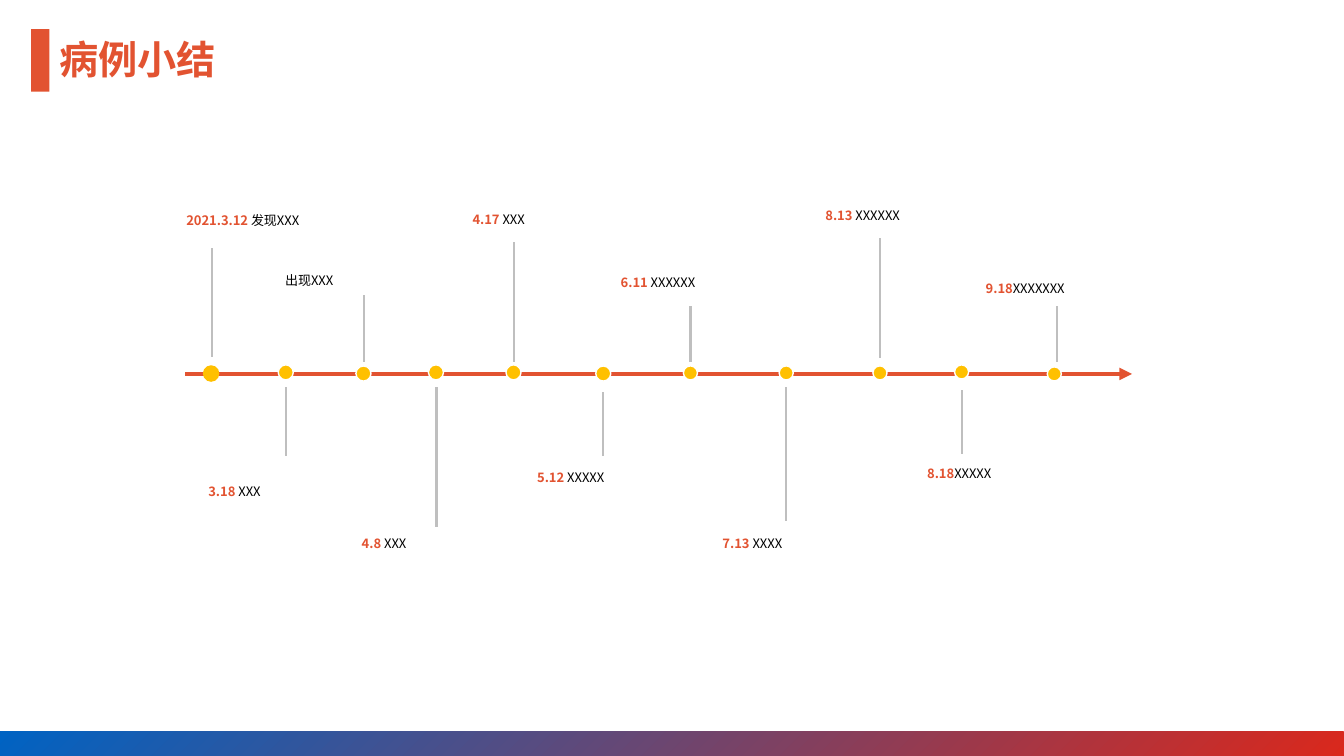
from dataclasses import dataclass

from lxml.etree import SubElement
from pptx import Presentation
from pptx.dml.color import RGBColor
from pptx.enum.shapes import MSO_CONNECTOR_TYPE as Connector
from pptx.enum.shapes import MSO_SHAPE as Preset
from pptx.enum.text import MSO_ANCHOR as Anchor
from pptx.enum.text import PP_ALIGN as Align
from pptx.oxml.ns import qn
from pptx.shapes.autoshape import Shape
from pptx.shapes.connector import Connector as Line
from pptx.slide import Slide
from pptx.text.text import _Run as Span
from pptx.util import Pt

FONT = "Noto Sans CJK SC"
ORANGE = RGBColor(0xE2, 0x53, 0x31)
YELLOW = RGBColor(0xFF, 0xC0, 0x00)
GRAY = RGBColor(0xBF, 0xBF, 0xBF)
WHITE = RGBColor(0xFF, 0xFF, 0xFF)
BLACK = RGBColor(0x00, 0x00, 0x00)
RED = RGBColor(0xDA, 0x28, 0x1C)
BLUE = RGBColor(0x00, 0x63, 0xC3)

PAGE_WIDTH, PAGE_HEIGHT = 960, 540
FOOTER_HEIGHT = 17.3
AXIS_Y = 267.1
LABEL_SIZE = 9.3


@dataclass(frozen=True)
class Frame:
    left: float
    top: float
    width: float
    height: float


@dataclass(frozen=True)
class Dot:
    x: float
    y: float
    size: float = 10.8
    outline: RGBColor = WHITE


@dataclass(frozen=True)
class Stem:
    x: float
    near: float
    far: float


@dataclass(frozen=True)
class Event:
    date: str
    note: str
    label: Frame
    stem: Stem
    dot: Dot
    wrap: bool = True


EVENTS = [
    Event("2021.3.12 ", "发现XXX", Frame(126, 148.3, 157, 18.7),
          Stem(151.2, 254.9, 177.1), Dot(150.8, 266.8, outline=YELLOW)),
    Event("3.18 ", "XXX", Frame(141.8, 339.1, 118.1, 23.8),
          Stem(204.5, 276.5, 325.4), Dot(204.1, 266)),
    Event("", "出现XXX", Frame(196.6, 190.1, 144, 20.2),
          Stem(259.9, 258.5, 211), Dot(259.6, 266.8), wrap=False),
    Event("4.8 ", "XXX", Frame(251.3, 378.7, 115.9, 18.7),
          Stem(311.8, 276.5, 376.6), Dot(311.4, 266)),
    Event("4.17 ", "XXX", Frame(330.5, 146.2, 132.5, 20.2),
          Stem(367.2, 258.5, 172.8), Dot(366.8, 266)),
    Event("5.12 ", "XXXXX", Frame(376.6, 331.9, 115.9, 18.7),
          Stem(430.6, 280.1, 325.4), Dot(430.9, 266.8), wrap=False),
    Event("6.11 ", "XXXXXX", Frame(436.3, 189.4, 115.2, 23.8),
          Stem(493.2, 258.5, 218.9), Dot(493.2, 266.4, 10.1)),
    Event("7.13 ", "XXXX", Frame(509, 378.7, 104.4, 19.4),
          Stem(561.6, 276.5, 372.2), Dot(561.6, 266.4, 10.1)),
    Event("8.13 ", "XXXXXX", Frame(582.5, 144.7, 115.9, 18.7),
          Stem(628.6, 255.6, 169.9), Dot(628.6, 266.4, 10.1)),
    Event("8.18", "XXXXX", Frame(655.2, 328.3, 132.5, 20.2),
          Stem(686.9, 278.6, 324), Dot(686.9, 265.7, 10.1)),
    Event("9.18", "XXXXXXX", Frame(697, 195.8, 132.5, 20.2),
          Stem(755.3, 258.5, 218.9), Dot(753.1, 267.1, 10.1)),
]


def style_span(span: Span, size: float, color: RGBColor, bold: bool) -> None:
    span.font.size = Pt(size)
    span.font.bold = bold
    span.font.color.rgb = color
    span.font.name = FONT
    SubElement(span.font._element, qn("a:ea"), typeface=FONT)


def add_block(page: Slide, preset: Preset, frame: Frame, color: RGBColor) -> Shape:
    block = page.shapes.add_shape(
        preset, Pt(frame.left), Pt(frame.top), Pt(frame.width), Pt(frame.height))
    block.shadow.inherit = False
    block.fill.solid()
    block.fill.fore_color.rgb = color
    block.line.fill.background()
    return block


def add_line(page: Slide, start: tuple[float, float], end: tuple[float, float],
             color: RGBColor, width: float) -> Line:
    line = page.shapes.add_connector(
        Connector.STRAIGHT, Pt(start[0]), Pt(start[1]), Pt(end[0]), Pt(end[1]))
    line.line.color.rgb = color
    line.line.width = Pt(width)
    SubElement(line._element.spPr, qn("a:effectLst"))
    return line


def add_footer(page: Slide) -> None:
    frame = Frame(0, PAGE_HEIGHT - FOOTER_HEIGHT, PAGE_WIDTH, FOOTER_HEIGHT)
    footer = add_block(page, Preset.RECTANGLE, frame, RED)
    footer.fill.gradient()
    footer.fill.gradient_angle = 135
    for stop, color, position in zip(footer.fill.gradient_stops, (RED, BLUE), (0, 1)):
        stop.color.rgb = color
        stop.position = position


def add_title(page: Slide, title: str) -> None:
    box = page.shapes.add_textbox(Pt(35.3), Pt(21.6), Pt(141.8), Pt(41))
    box.text_frame.word_wrap = True
    box.text_frame.text = title
    style_span(box.text_frame.paragraphs[0].runs[0], 28, ORANGE, True)
    add_block(page, Preset.RECTANGLE, Frame(22.3, 20.9, 13, 44.6), ORANGE)


def add_axis(page: Slide) -> None:
    axis = add_line(page, (132.5, AXIS_Y), (808.6, AXIS_Y), ORANGE, 3)
    SubElement(axis.line._get_or_add_ln(), qn("a:tailEnd"), type="triangle")


def add_label(page: Slide, event: Event) -> None:
    label = add_block(page, Preset.RECTANGLE, event.label, WHITE)
    label.text_frame.word_wrap = event.wrap
    label.text_frame.vertical_anchor = Anchor.MIDDLE
    para = label.text_frame.paragraphs[0]
    para.alignment = Align.LEFT
    if event.date:
        para.text = event.date
        style_span(para.runs[0], LABEL_SIZE, ORANGE, True)
    note = para.add_run()
    note.text = event.note
    style_span(note, LABEL_SIZE, BLACK, False)


def add_event(page: Slide, event: Event) -> None:
    add_label(page, event)
    stem, dot = event.stem, event.dot
    add_line(page, (stem.x, stem.near), (stem.x, stem.far), GRAY, 1.5)
    frame = Frame(dot.x - dot.size / 2, dot.y - dot.size / 2, dot.size, dot.size)
    marker = add_block(page, Preset.OVAL, frame, YELLOW)
    marker.line.color.rgb = dot.outline
    marker.line.width = Pt(1)


def main() -> None:
    deck = Presentation()
    deck.slide_width, deck.slide_height = Pt(PAGE_WIDTH), Pt(PAGE_HEIGHT)
    page = deck.slides.add_slide(deck.slide_layouts[6])
    add_footer(page)
    add_title(page, "病例小结")
    add_axis(page)
    for event in EVENTS:
        add_event(page, event)
    deck.save("out.pptx")


if __name__ == "__main__":
    main()
